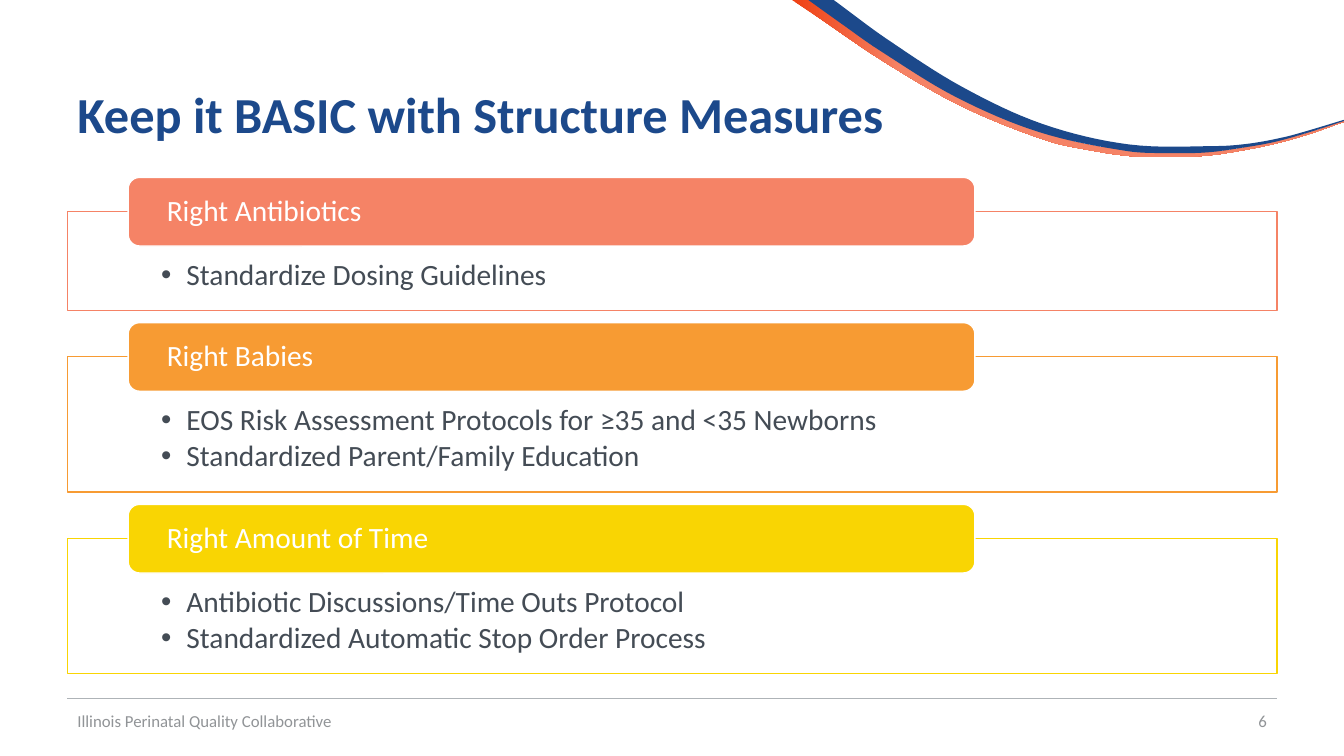
from dataclasses import dataclass

from lxml.etree import SubElement
from pptx import Presentation
from pptx.dml.color import RGBColor
from pptx.enum.shapes import MSO_CONNECTOR, MSO_SHAPE
from pptx.enum.text import MSO_ANCHOR, PP_ALIGN
from pptx.oxml.ns import qn
from pptx.util import Cm, Pt


@dataclass(frozen=True)
class Theme:
    font: str = "Calibri"
    navy: str = "1C498B"
    red: str = "EF4114"
    coral: str = "F58366"
    orange: str = "F79B33"
    yellow: str = "F9D503"
    white: str = "FFFFFF"
    body: str = "444C55"
    muted: str = "919497"
    rule: str = "AEB3B7"
    title_size: float = 36
    body_size: float = 21
    footer_size: float = 12


def smooth_edge(knots, steps=8):
    """Points of a smooth curve running left to right through the knots."""
    last = len(knots) - 1
    slopes = []
    for i in range(last + 1):
        (x0, y0), (x1, y1) = knots[max(i - 1, 0)], knots[min(i + 1, last)]
        slopes.append((y1 - y0) / (x1 - x0))
    points = [knots[0]]
    for i in range(last):
        (x0, y0), (x1, y1) = knots[i], knots[i + 1]
        width = x1 - x0
        for step in range(1, steps + 1):
            t = step / steps
            blend = t * t * (3 - 2 * t)
            bend = t * (1 - t) * (slopes[i] * (1 - t) - slopes[i + 1] * t)
            points.append((x0 + width * t, y0 + (y1 - y0) * blend + width * bend))
    return points


class SlideBuilder:
    def __init__(self, page, theme):
        self.page = page
        self.theme = theme

    def color(self, value):
        return RGBColor.from_string(value)

    def set_text(self, box, lines, size, color, insets=(0.25, 0.13, 0.25, 0.13),
                 anchor=MSO_ANCHOR.MIDDLE, align=PP_ALIGN.LEFT, bold=False, spacing=1.0):
        frame = box.text_frame
        frame.word_wrap = True
        frame.vertical_anchor = anchor
        frame.margin_left, frame.margin_top, frame.margin_right, frame.margin_bottom = map(Cm, insets)
        frame.text = "\n".join(lines)
        for para in frame.paragraphs:
            para.alignment = align
            para.line_spacing = spacing
            for span in para.runs:
                span.font.name = self.theme.font
                span.font.size = Pt(size)
                span.font.bold = bold
                span.font.color.rgb = self.color(color)
        return frame

    def text(self, left, top, width, height, line, size, color, **options):
        box = self.page.shapes.add_textbox(Cm(left), Cm(top), Cm(width), Cm(height))
        self.set_text(box, [line], size, color, **options)

    def panel(self, kind, left, top, width, height, fill, outline):
        box = self.page.shapes.add_shape(kind, Cm(left), Cm(top), Cm(width), Cm(height))
        box.shadow.inherit = False
        box.fill.solid()
        box.fill.fore_color.rgb = self.color(fill)
        box.line.color.rgb = self.color(outline)
        box.line.width = Pt(1)
        return box

    def bullets(self, frame):
        for index, para in enumerate(frame.paragraphs):
            props = para._p.get_or_add_pPr()
            props.set("marL", str(Cm(0.64)))
            props.set("indent", str(-Cm(0.64)))
            SubElement(props, qn("a:buFont"), typeface="Arial")
            SubElement(props, qn("a:buChar"), char="•")
            if index:
                para.space_before = Pt(3.1)

    def rule(self, left, right, top):
        line = self.page.shapes.add_connector(
            MSO_CONNECTOR.STRAIGHT, Cm(left), Cm(top), Cm(right), Cm(top))
        line.line.color.rgb = self.color(self.theme.rule)
        line.line.width = Pt(0.75)
        SubElement(line._element.spPr, qn("a:effectLst"))

    def ribbon(self, upper, lower, *colors):
        outline = smooth_edge(upper) + smooth_edge(lower)[::-1]
        points = [(Cm(x), Cm(y)) for x, y in outline]
        builder = self.page.shapes.build_freeform(*points[0])
        builder.add_line_segments(points[1:], close=True)
        band = builder.convert_to_shape()
        band.shadow.inherit = False
        band.line.fill.background()
        if len(colors) == 1:
            band.fill.solid()
            band.fill.fore_color.rgb = self.color(colors[0])
            return
        band.fill.gradient()
        band.fill.gradient_angle = 0
        for stop, color, position in zip(band.fill.gradient_stops, colors, (0, 0.2)):
            stop.color.rgb = self.color(color)
            stop.position = position

    def section(self, top, height, heading, items, accent):
        theme = self.theme
        frame = self.panel(MSO_SHAPE.RECTANGLE, 1.7, top, 30.48, height, theme.white, accent)
        self.bullets(self.set_text(frame, items, theme.body_size, theme.body,
                                   insets=(2.36, 1.22, 2.36, 0.41),
                                   anchor=MSO_ANCHOR.TOP, spacing=0.9))
        tab = self.panel(MSO_SHAPE.ROUNDED_RECTANGLE, 3.23, top - 0.86, 21.34, 1.73,
                         accent, theme.white)
        self.set_text(tab, [heading], theme.body_size, theme.white,
                      insets=(0.89, 0, 0.89, 0), spacing=0.9)


# Edges of the two ribbons, in centimetres
CORAL_UPPER = [(20.45, 0), (22.4, 1.37), (24.33, 2.51), (26.39, 3.38), (27.46, 3.66),
               (28.58, 3.81), (29.67, 3.86), (30.51, 3.84), (31.34, 3.73), (32.18, 3.56),
               (32.99, 3.35), (33.87, 3.05)]
CORAL_LOWER = [(19.96, 0), (20.42, 0.3), (22.3, 1.57), (24.26, 2.69), (26.34, 3.53),
               (27.43, 3.78), (28.55, 3.94), (29.69, 3.96), (30.53, 3.91), (31.37, 3.78),
               (32.18, 3.61), (32.99, 3.38), (33.87, 3.07)]
NAVY_UPPER = [(21.01, 0), (22.33, 0.97), (24.23, 2.18), (26.26, 3.12), (28.45, 3.64),
              (30.71, 3.68), (31.55, 3.61), (32.39, 3.45), (32.94, 3.3), (33.87, 3.02)]
NAVY_LOWER = [(20.37, 0), (21.18, 0.58), (22.12, 1.24), (24.08, 2.44), (26.19, 3.33),
              (28.42, 3.81), (29.57, 3.86), (30.43, 3.84), (31.27, 3.73), (32.11, 3.58),
              (32.94, 3.35), (33.87, 3.05)]


def main():
    theme = Theme()
    deck = Presentation()
    deck.slide_width, deck.slide_height = Cm(33.87), Cm(19.05)
    slide = SlideBuilder(deck.slides.add_slide(deck.slide_layouts[6]), theme)

    # Corner ribbons, footer rule and title
    slide.ribbon(CORAL_UPPER, CORAL_LOWER, theme.red, theme.coral)
    slide.ribbon(NAVY_UPPER, NAVY_LOWER, theme.navy)
    slide.rule(1.7, 32.18, 17.6)
    slide.text(1.7, 1.02, 30.48, 3.68, "Keep it BASIC with Structure Measures",
               theme.title_size, theme.navy, bold=True)

    # Stacked sections, each as tall as its list needs
    sections = [
        ("Right Antibiotics", theme.coral, ["Standardize Dosing Guidelines"]),
        ("Right Babies", theme.orange,
         ["EOS Risk Assessment Protocols for ≥35 and <35 Newborns",
          "Standardized Parent/Family Education"]),
        ("Right Amount of Time", theme.yellow,
         ["Antibiotic Discussions/Time Outs Protocol",
          "Standardized Automatic Stop Order Process"]),
    ]
    top = 5.33
    for heading, accent, items in sections:
        height = 1.57 + 0.92 * len(items)
        slide.section(top, height, heading, items, accent)
        top += height + 1.17

    # Footer
    slide.text(24.56, 17.65, 7.62, 1.02, "6", theme.footer_size, theme.muted,
               align=PP_ALIGN.RIGHT)
    slide.text(1.7, 17.65, 11.43, 1.02, "Illinois Perinatal Quality Collaborative",
               theme.footer_size, theme.muted)

    deck.save("out.pptx")


if __name__ == "__main__":
    main()
